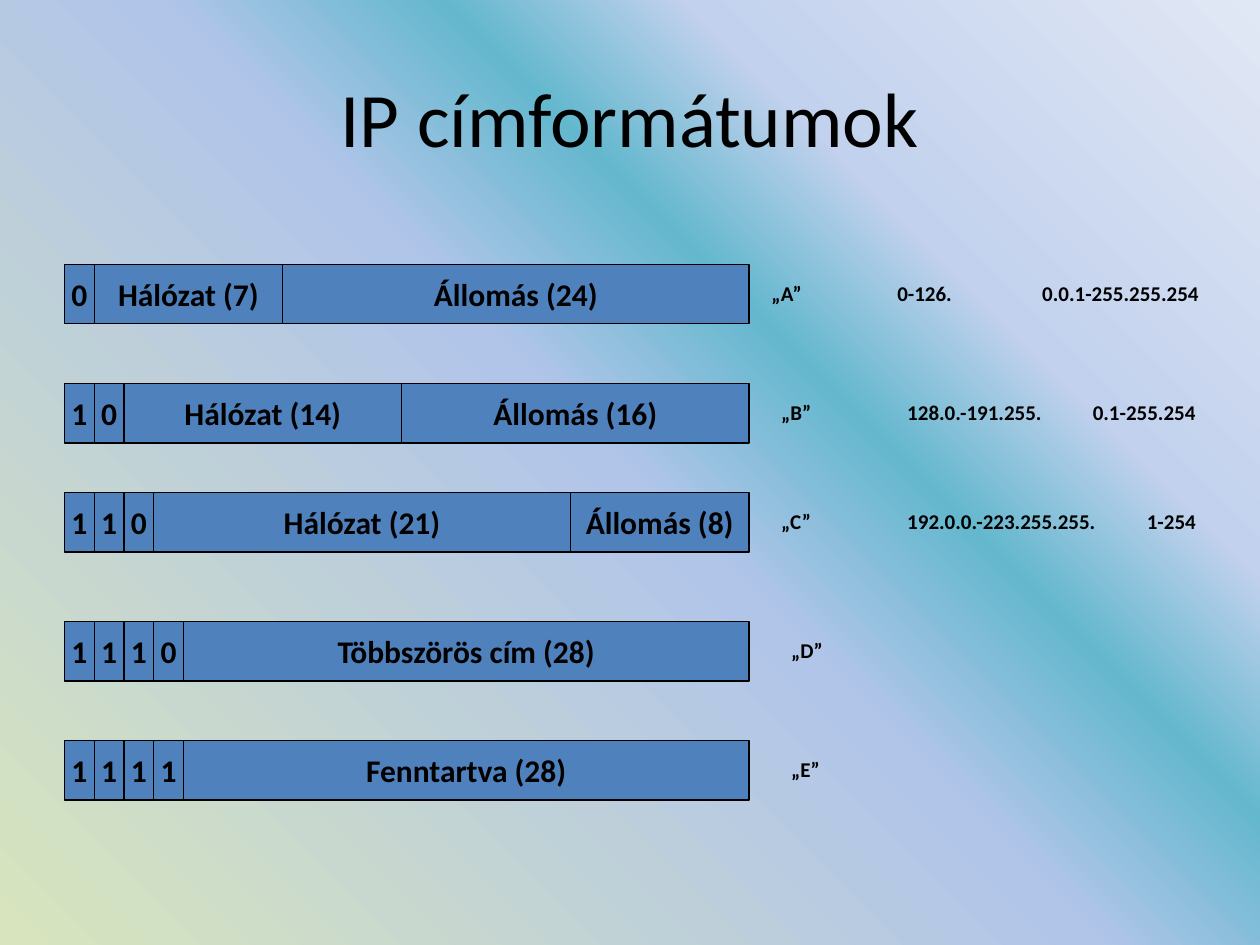
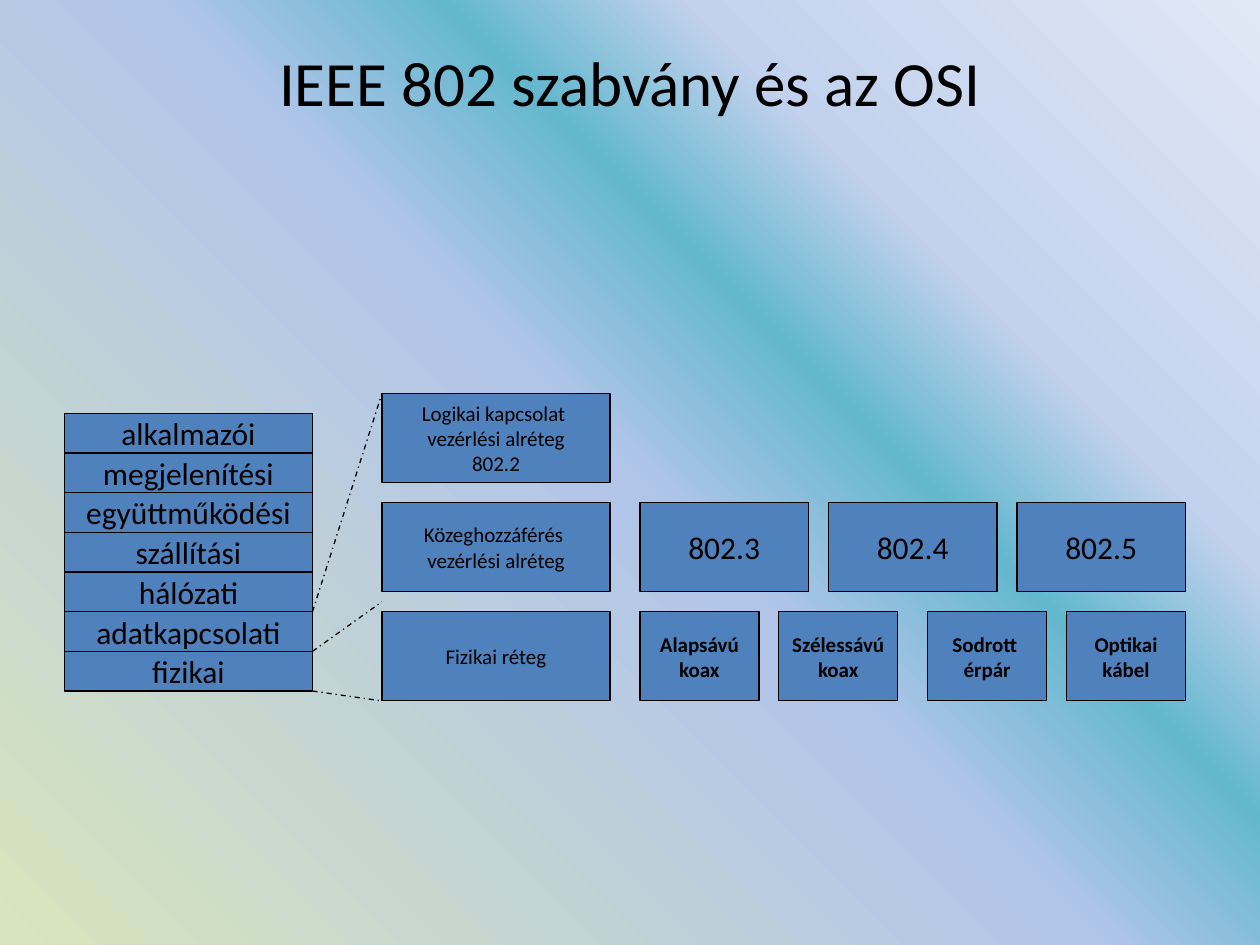
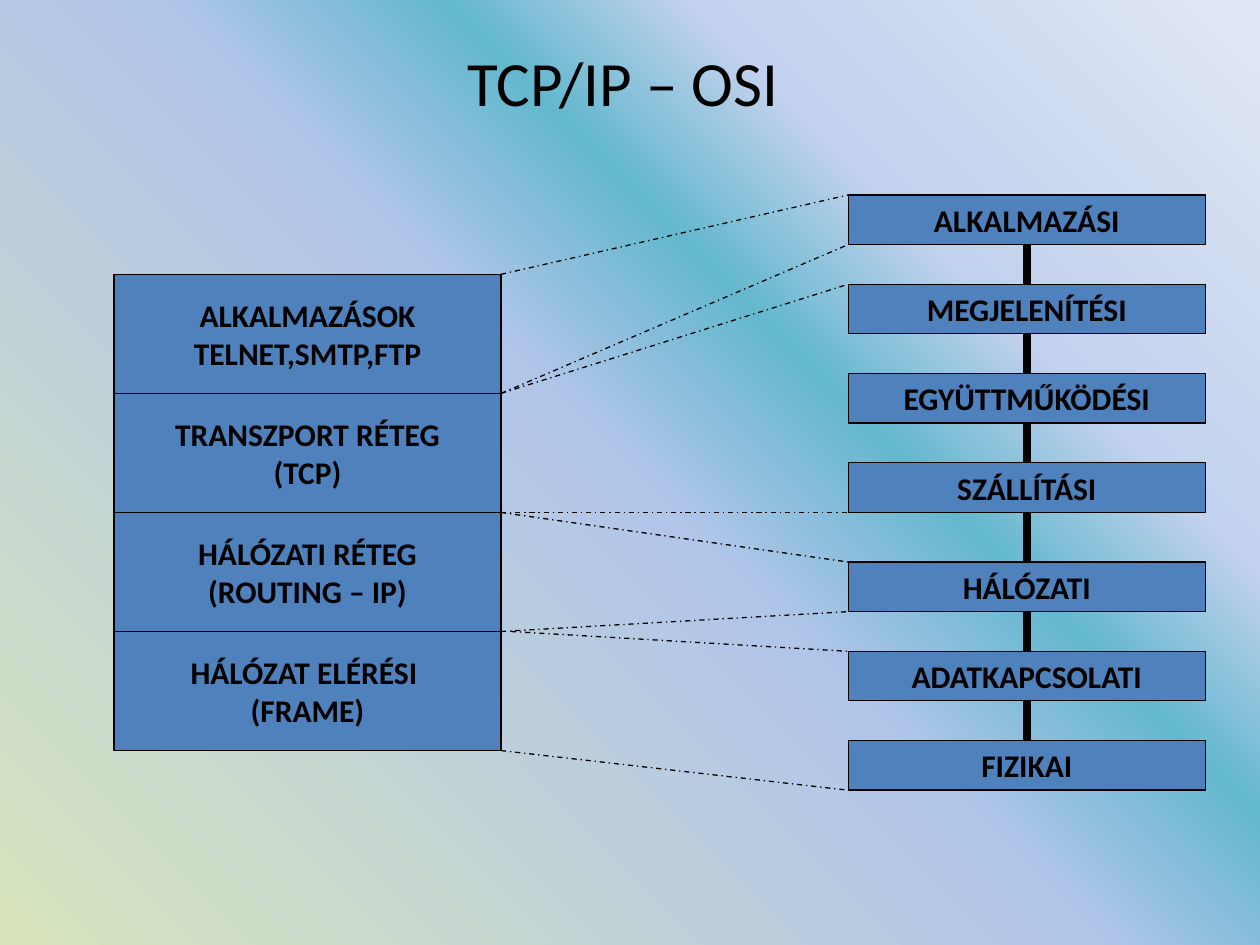
import pptx
import pptx.dml.color
import pptx.enum.dml
import pptx.enum.shapes
import pptx.enum.text
import pptx.oxml
import pptx.oxml.ns
import pptx.util
import lxml.etree

Cm = pptx.util.Cm
Pt = pptx.util.Pt
color = pptx.dml.color.RGBColor.from_string
Align = pptx.enum.text.PP_ALIGN
Anchor = pptx.enum.text.MSO_ANCHOR
qn = pptx.oxml.ns.qn

FONT = "Calibri"
BLACK = "000000"
BLUE = "4F81BD"
GRADIENT = [(0, "953735"), (0, "D7E4BD"), (50, "B1C5E9"),
            (63, "64B8CE"), (74, "C2D1ED"), (100, "E1E8F5")]


def add_box(page, text, left, top, width, height, size=18, bold=False,
            filled=True, align=Align.CENTER, anchor=Anchor.MIDDLE):
    """Add a text box, or a blue rectangle if filled; lengths in cm."""
    place = Cm(left), Cm(top), Cm(width), Cm(height)
    if filled:
        box = page.shapes.add_shape(pptx.enum.shapes.MSO_SHAPE.RECTANGLE, *place)
        box.shadow.inherit = False
        box.fill.solid()
        box.fill.fore_color.rgb = color(BLUE)
        box.line.color.rgb = color(BLACK)
        box.line.width = Pt(0.75)
    else:
        box = page.shapes.add_textbox(*place)
    frame = box.text_frame
    frame.word_wrap = not filled
    frame.vertical_anchor = anchor
    para = frame.paragraphs[0]
    para.text = text
    para.alignment = align
    for span in para.runs:
        span.font.name = FONT
        span.font.size = Pt(size)
        span.font.bold = bold
        span.font.color.rgb = color(BLACK)
    return box


def add_line(page, x1, y1, x2, y2, width=0.75, dashed=True):
    line = page.shapes.add_connector(pptx.enum.shapes.MSO_CONNECTOR.STRAIGHT,
                                     Cm(x1), Cm(y1), Cm(x2), Cm(y2))
    line.line.color.rgb = color(BLACK)
    line.line.width = Pt(width)
    if dashed:
        line.line.dash_style = pptx.enum.dml.MSO_LINE.DASH_DOT
    lxml.etree.SubElement(line._element.spPr, qn("a:effectLst"))


deck = pptx.Presentation()
deck.slide_width = Cm(25.4)
deck.slide_height = Cm(19.05)

# Shared background: gradient spreading from the bottom left corner
background = deck.slide_master.background
background.fill.gradient()
stops = "".join(f'<a:gs pos="{position * 1000}"><a:srgbClr val="{value}"/></a:gs>'
                for position, value in GRADIENT)
gradient = pptx.oxml.parse_xml(
    f'<a:gradFill {pptx.oxml.ns.nsdecls("a")} rotWithShape="1"><a:gsLst>{stops}</a:gsLst>'
    '<a:path path="circle"><a:fillToRect t="100000" r="100000"/></a:path></a:gradFill>')
old_gradient = next(deck.slide_master._element.iter(qn("a:gradFill")))
old_gradient.getparent().replace(old_gradient, gradient)

# Pages with their titles
pages = []
for title, title_height, title_size in [("IP címformátumok", 3.18, 44),
                                        ("IEEE 802 szabvány és az OSI", 1.75, 36),
                                        ("TCP/IP – OSI ", 1.75, 36)]:
    page = deck.slides.add_slide(deck.slide_layouts[6])
    add_box(page, title, 1.27, 0.76, 22.86, title_height, title_size, filled=False)
    pages.append(page)
formats_page, ieee_page, tcp_page = pages

# Slide 1: address classes as (top, prefix bits, fields with right edge,
# label left, label, tab stops)
bit_width = 0.6
address_classes = [
    (5.33, "0", [("Hálózat (7)", 5.7), ("Állomás (24)", 15.1)],
     15.3, "„A”\t0-126.\t0.0.1-255.255.254", [2.54, 5.46]),
    (7.73, "10", [("Hálózat (14)", 8.1), ("Állomás (16)", 15.1)],
     15.5, "„B”\t128.0.-191.255.\t0.1-255.254", [2.54, 6.28]),
    (9.93, "110", [("Hálózat (21)", 11.5), ("Állomás (8)", 15.1)],
     15.5, "„C”\t192.0.0.-223.255.255.\t1-254", [2.54, 7.37]),
    (12.53, "1110", [("Többszörös cím (28)", 15.1)], 15.7, "„D”", []),
    (14.93, "1111", [("Fenntartva (28)", 15.1)], 15.7, "„E”", []),
]
for top, bits, fields, label_left, label, tab_stops in address_classes:
    left = 1.3
    for bit in bits:
        add_box(formats_page, bit, left, top, bit_width, 1.2, bold=True)
        left += bit_width
    for field, right in fields:
        add_box(formats_page, field, left, top, right - left, 1.2, bold=True)
        left = right
    box = add_box(formats_page, label, label_left, top + 0.2, 9.2, 0.76, 12, True,
                  filled=False, align=Align.LEFT, anchor=Anchor.TOP)
    if tab_stops:
        properties = box.text_frame.paragraphs[0]._p.get_or_add_pPr()
        tab_list = lxml.etree.SubElement(properties, qn("a:tabLst"))
        for stop in tab_stops:
            lxml.etree.SubElement(tab_list, qn("a:tab"), pos=str(int(Cm(stop))), algn="l")

# Slide 2: OSI layers
osi_layers = ["alkalmazói", "megjelenítési", "együttműködési", "szállítási",
              "hálózati", "adatkapcsolati", "fizikai"]
for index, layer in enumerate(osi_layers):
    add_box(ieee_page, layer, 1.3, 8.33 + index * 0.8, 5, 0.8)

# Slide 2: sublayers, standards and media
sublayers = ["Logikai kapcsolat \vvezérlési alréteg\v802.2",
             "Közeghozzáférés \vvezérlési alréteg", "Fizikai réteg"]
for index, sublayer in enumerate(sublayers):
    add_box(ieee_page, sublayer, 7.7, 7.93 + index * 2.2, 4.6, 1.8, 12)
for index, standard in enumerate(["802.3", "802.4", "802.5"]):
    add_box(ieee_page, standard, 12.9 + index * 3.8, 10.13, 3.4, 1.8)
for left, medium in [(12.9, "Alapsávú\vkoax"), (15.7, "Szélessávú\vkoax"),
                     (18.7, "Sodrott \vérpár"), (21.5, "Optikai\vkábel")]:
    add_box(ieee_page, medium, left, 12.33, 2.4, 1.8, 12, True)
for layer_y, sublayer_y in [(13.93, 14.13), (13.13, 12.13), (12.33, 7.93)]:
    add_line(ieee_page, 6.3, layer_y, 7.7, sublayer_y)

# Slide 3: thick line behind the OSI column
add_line(tcp_page, 20.7, 4.73, 20.7, 15.73, width=4.5, dashed=False)

# Slide 3: TCP/IP layers and OSI layers
tcp_layers = ["ALKALMAZÁSOK\vTELNET,SMTP,FTP", "TRANSZPORT RÉTEG\v(TCP)",
              "HÁLÓZATI RÉTEG\v(ROUTING – IP)", "HÁLÓZAT ELÉRÉSI \v(FRAME)"]
for index, layer in enumerate(tcp_layers):
    add_box(tcp_page, layer, 2.3, 5.53 + index * 2.4, 7.8, 2.4, bold=True)
for top, layer in [(3.93, "ALKALMAZÁSI"), (5.73, "MEGJELENÍTÉSI"),
                   (7.53, "EGYÜTTMŰKÖDÉSI"), (9.33, "SZÁLLÍTÁSI"),
                   (11.33, "HÁLÓZATI"), (13.13, "ADATKAPCSOLATI"),
                   (14.93, "FIZIKAI")]:
    add_box(tcp_page, layer, 17.1, top, 7.2, 1, bold=True)

# Slide 3: which layers correspond
for tcp_x, tcp_y, osi_y in [(10.1, 5.53, 3.93), (10.1, 7.93, 4.93),
                            (10.1, 7.93, 5.73), (10.1, 10.33, 10.33),
                            (10.1, 10.33, 11.33), (10.1, 12.73, 12.33),
                            (10.3, 12.73, 13.13), (10.1, 15.13, 15.93)]:
    add_line(tcp_page, tcp_x, tcp_y, 17.1, osi_y)

deck.save("out.pptx")
